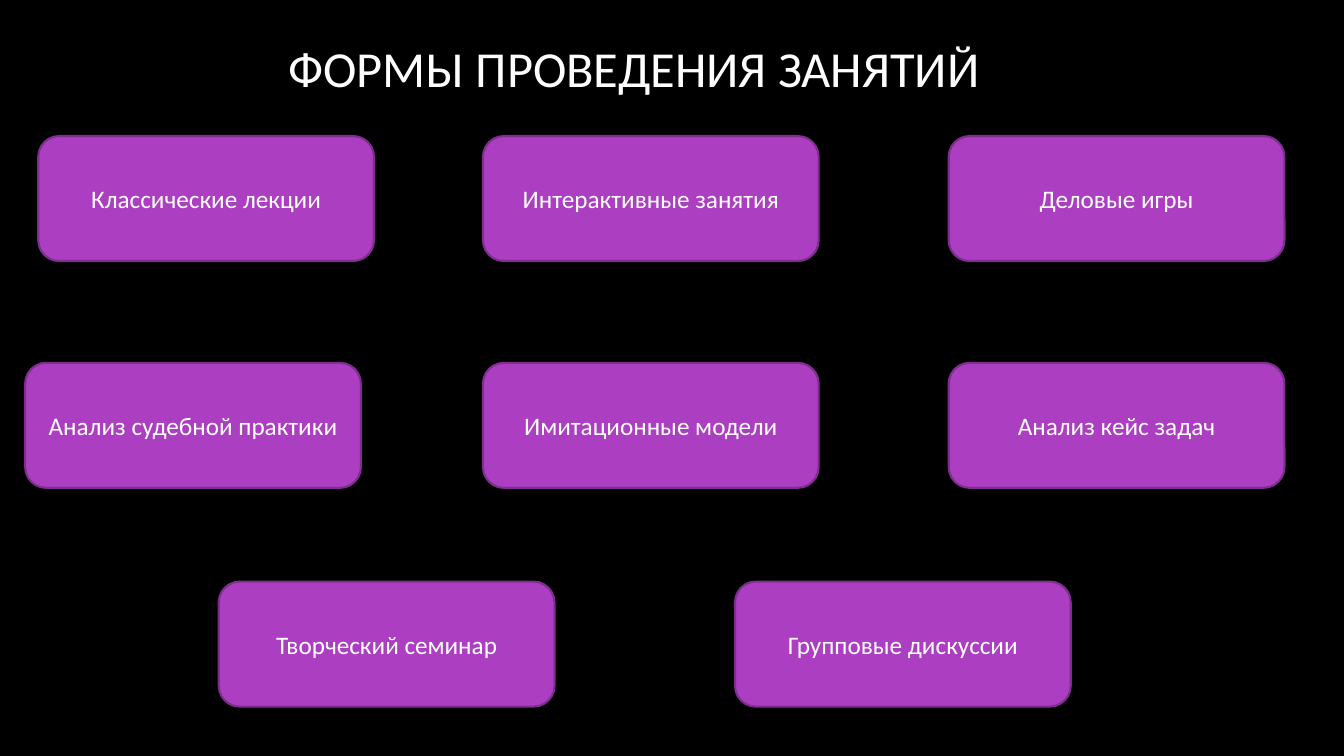
from dataclasses import dataclass

from pptx import Presentation
from pptx.dml.color import RGBColor as RGB
from pptx.enum.shapes import MSO_SHAPE as SHAPE
from pptx.enum.text import MSO_ANCHOR as ANCHOR, PP_ALIGN as ALIGN
from pptx.util import Pt


@dataclass(frozen=True)
class Theme:
    back: RGB = RGB.from_string("000000")
    fill: RGB = RGB.from_string("AC3EC1")
    line: RGB = RGB.from_string("7F2E8F")
    text: RGB = RGB.from_string("FFFFFF")
    font: str = "Calibri"
    title_size: int = 36
    card_size: int = 18


THEME = Theme()
PX = 9144  # 100 px to the inch


def write(tf, text, size, color=THEME.text, align=ALIGN.CENTER):
    tf.word_wrap = True
    tf.vertical_anchor = ANCHOR.MIDDLE
    p = tf.paragraphs[0]
    p.alignment = align
    r = p.add_run()
    r.text = text
    r.font.name = THEME.font
    r.font.size = Pt(size)
    r.font.color.rgb = color


# Slide
prs = Presentation()
prs.slide_width, prs.slide_height = 1333 * PX, 750 * PX
s = prs.slides.add_slide(prs.slide_layouts[5])
s.background.fill.solid()
s.background.fill.fore_color.rgb = THEME.back

# Title
title = s.shapes.title
title.left, title.top, title.width, title.height = 75 * PX, 30 * PX, 1108 * PX, 74 * PX
write(title.text_frame, "ФОРМЫ ПРОВЕДЕНИЯ ЗАНЯТИЙ", THEME.title_size)

# Cards: top of each row, then left edge and label of each card
CARD_W, CARD_H = 333, 124
rows = [
    (135, [(38, "Классические лекции"), (479, "Интерактивные занятия"), (941, "Деловые игры")]),
    (360, [(25, "Анализ судебной практики"), (479, "Имитационные модели"), (941, "Анализ кейс задач")]),
    (577, [(217, "Творческий семинар"), (729, "Групповые дискуссии")]),
]
for top, cards in rows:
    for left, label in cards:
        sp = s.shapes.add_shape(SHAPE.ROUNDED_RECTANGLE, left * PX, top * PX, CARD_W * PX, CARD_H * PX)
        sp.shadow.inherit = False
        sp.fill.solid()
        sp.fill.fore_color.rgb = THEME.fill
        sp.line.color.rgb = THEME.line
        sp.line.width = Pt(1.5)
        write(sp.text_frame, label, THEME.card_size)

prs.save("out.pptx")
